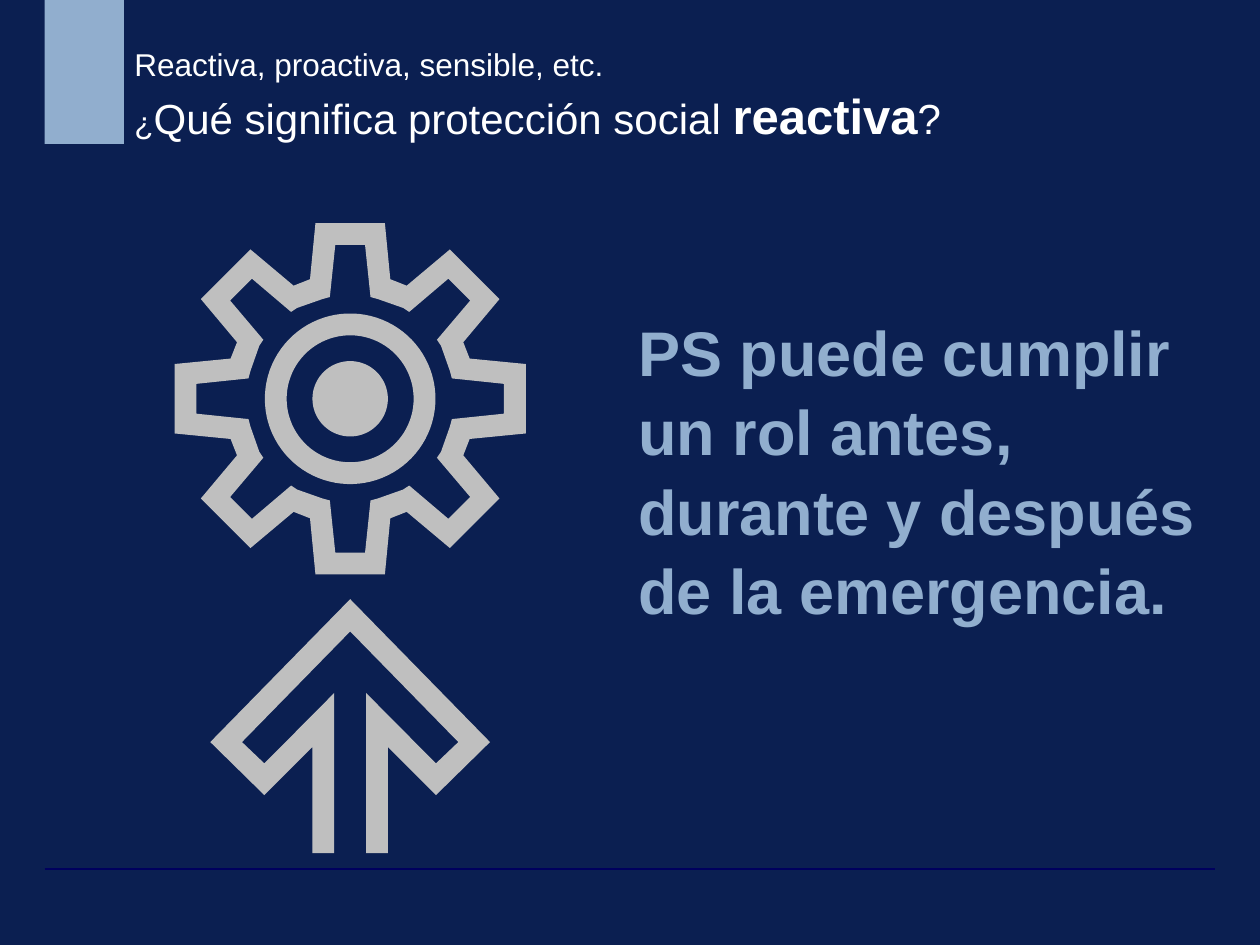
from dataclasses import dataclass
from math import cos, pi, sin

from lxml import etree
from pptx import Presentation
from pptx.dml.color import RGBColor
from pptx.enum.shapes import MSO_CONNECTOR, MSO_SHAPE
from pptx.oxml.ns import qn
from pptx.util import Cm, Pt

RECT = MSO_SHAPE.RECTANGLE
LINE = MSO_CONNECTOR.STRAIGHT


@dataclass(frozen=True)
class Theme:
    """Hold the colours, font and type sizes."""
    back: str = "0B1F51"
    rule: str = "00005E"
    blue: str = "91AECE"
    grey: str = "BFBFBF"
    white: str = "FFFFFF"
    font: str = "Arial"
    small: int = 18
    mid: int = 24
    large: int = 28
    huge: int = 36
    lead: float = 1.05


THEME = Theme()
HUB = (7.06, 8.04)
RINGS = (1.72, 1.28, 0.76)
TOOTH_OUT = [(0.7, -3.54), (0.81, -2.41), (1.14, -2.28), (2.01, -3.01)]
TOOTH_IN = [(0.3, -3.1), (0.41, -2.05), (0.56, -2.01), (1.07, -1.83),
            (1.19, -1.75), (1.98, -2.42)]
ARROW = [(0, 4.04), (2.82, 6.92), (1.73, 7.99), (0.76, 7.02), (0.76, 9.16),
         (0.32, 9.16), (0.32, 5.93), (1.73, 7.35), (2.18, 6.92), (0, 4.69)]


def paint(shape, color):
    """Give a shape a flat fill with no outline or shadow."""
    shape.fill.solid()
    shape.fill.fore_color.rgb = RGBColor.from_string(color)
    shape.line.fill.background()
    shape.shadow.inherit = False


def add_bar(slide, box, color):
    """Add a plain rectangle."""
    paint(slide.shapes.add_shape(RECT, *map(Cm, box)), color)


def add_rule(slide, ends, color):
    """Add a thin straight line."""
    rule = slide.shapes.add_connector(LINE, *map(Cm, ends))
    rule.line.width = Pt(1)
    rule.line.color.rgb = RGBColor.from_string(color)
    etree.SubElement(rule.element.spPr, qn("a:effectLst"))


def add_text(slide, box, lines):
    """Add a text box whose lines are lists of text and format pairs."""
    frame = slide.shapes.add_textbox(*map(Cm, box)).text_frame
    frame.word_wrap = True
    para = frame.paragraphs[0]
    para.line_spacing = THEME.lead
    for i, line in enumerate(lines):
        if i:
            para.add_line_break()
        for text, color, form in line:
            run = para.add_run()
            run.text = text
            run.font.color.rgb = RGBColor.from_string(color)
            for name, value in {"name": THEME.font, **form}.items():
                setattr(run.font, name, value)


def gear(half):
    """Mirror half a tooth on the diagonal and turn it four times."""
    part = half + [(-y, -x) for x, y in reversed(half)]
    points = []
    for _ in range(4):
        points += part
        part = [(-y, x) for x, y in part]
    return points


def ring(radius, steps=90):
    """Return the points of a circle round the hub."""
    turns = [2 * pi * i / steps for i in range(steps)]
    return [(radius * cos(t), radius * sin(t)) for t in turns]


def mirror(half):
    """Close a right half with its left twin."""
    return half + [(-x, y) for x, y in half[-2:0:-1]]


def add_icon(slide, loops, color):
    """Draw closed loops round the hub as one freeform."""
    placed = [[(Cm(HUB[0] + x), Cm(HUB[1] + y)) for x, y in loop]
              for loop in loops]
    pen = slide.shapes.build_freeform(*placed[0][0])
    for i, loop in enumerate(placed):
        if i:
            pen.move_to(*loop[0])
        pen.add_line_segments(loop[1:], close=True)
    paint(pen.convert_to_shape(), color)


def main():
    """Build the slide and save it."""
    deck = Presentation()
    deck.slide_width, deck.slide_height = Cm(25.4), Cm(19.05)
    slide = deck.slides.add_slide(deck.slide_layouts[6])
    back = slide.background.fill
    back.solid()
    back.fore_color.rgb = RGBColor.from_string(THEME.back)

    small, mid = {"size": Pt(THEME.small)}, {"size": Pt(THEME.mid)}
    large = {"size": Pt(THEME.large), "bold": True}
    huge = {"size": Pt(THEME.huge), "bold": True}
    white = THEME.white

    add_rule(slide, (0.9, 17.52, 24.5, 17.52), THEME.rule)
    add_text(slide, (12.62, 6.12, 12, 6.4), [
        [("PS puede cumplir un rol antes, durante y después de la emergencia.",
          THEME.blue, huge)]])
    add_text(slide, (2.46, 0.74, 21.64, 2.24), [
        [("Reactiva, proactiva, sensible, etc.", white, small)],
        [("¿", white, small),
         ("Qué significa protección social ", white, mid),
         ("reactiva", white, large),
         ("?", white, mid)]])
    add_bar(slide, (0.9, 0, 1.6, 2.9), THEME.blue)
    loops = [gear(TOOTH_OUT), gear(TOOTH_IN), mirror(ARROW)]
    add_icon(slide, loops + [ring(r) for r in RINGS], THEME.grey)
    deck.save("out.pptx")


if __name__ == "__main__":
    main()
